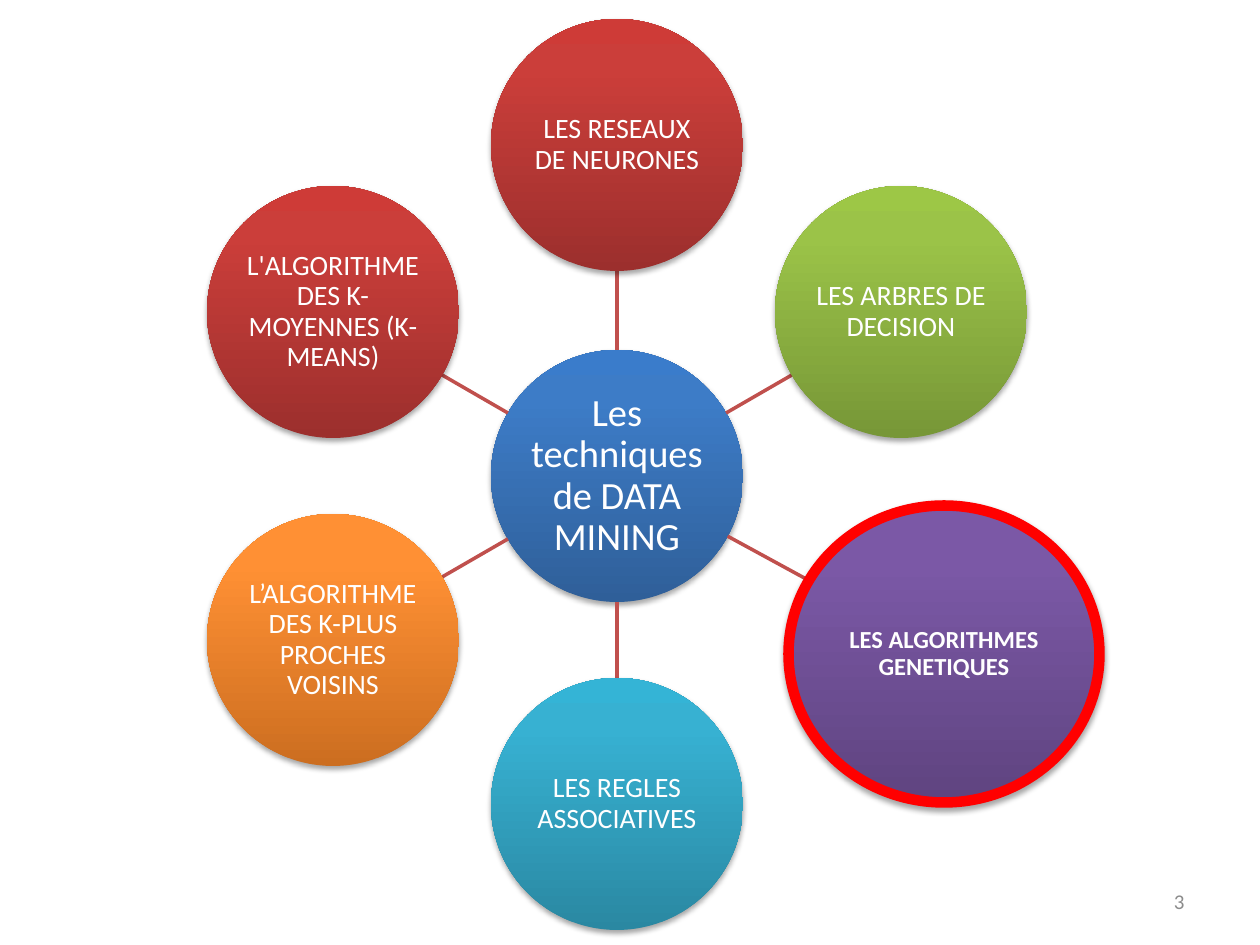
from copy import deepcopy
from dataclasses import dataclass
from math import cos, hypot, sin, atan2

from lxml.etree import SubElement
from pptx import Presentation
from pptx.dml.color import RGBColor
from pptx.enum.shapes import MSO_CONNECTOR as Connector, MSO_SHAPE as Shape
from pptx.enum.text import MSO_ANCHOR as Anchor, PP_ALIGN as Align
from pptx.oxml.ns import qn
from pptx.util import Emu, Pt

PX_PER_INCH = 126
FONT = "Calibri"
COLORS = {
    "text": "FFFFFF",
    "spoke": "C0504D",
    "highlight": "FF0000",
    "page": "8C8C8C",
    "shadow": "000000",
}
GRADIENTS = {
    "blue": ("2F5F99", "3D7CC7", "3A7CCB"),
    "red": ("9C2F2D", "CB3E3A", "CE3B37"),
    "green": ("779737", "9BC348", "9DC746"),
    "purple": ("5F4480", "7B58A6", "7C57A8"),
    "teal": ("2A88A2", "37B1D2", "34B4D6"),
    "orange": ("CC6E20", "FF9034", "FF9136"),
}
STOP_POSITIONS = (0, 0.8, 1)


@dataclass(frozen=True)
class Bubble:
    label: str
    gradient: str
    x: int
    y: int
    width: int = 252
    height: int = 252
    size: int = 16
    margin: int = 1
    highlighted: bool = False

    def edge(self, angle: float) -> tuple[float, float]:
        reach = 1 / hypot(2 * cos(angle) / self.width, 2 * sin(angle) / self.height)
        return self.x + reach * cos(angle), self.y + reach * sin(angle)


HUB = Bubble("Les techniques de DATA MINING", "blue", 617, 476, size=22, margin=2)
TECHNIQUES = (
    Bubble("LES RESEAUX DE NEURONES", "red", 617, 145),
    Bubble("LES ARBRES DE DECISION", "green", 901, 312),
    Bubble("LES ALGORITHMES GENETIQUES", "purple", 944, 654, 311, 297, 14,
           highlighted=True),
    Bubble("LES REGLES ASSOCIATIVES", "teal", 617, 804),
    Bubble("L’ALGORITHME DES K-PLUS PROCHES VOISINS", "orange", 333, 640),
    Bubble("L'ALGORITHME DES K-MOYENNES (K-MEANS)", "red", 333, 312),
)


def px(length: float) -> Emu:
    return Emu(round(length * 914400 / PX_PER_INCH))


def rgb(name: str) -> RGBColor:
    return RGBColor.from_string(COLORS[name])


def write(frame, text: str, size: int, color: str, align, bold: bool = False) -> None:
    frame.word_wrap = True
    frame.vertical_anchor = Anchor.MIDDLE
    paragraph = frame.paragraphs[0]
    paragraph.alignment = align
    run = paragraph.add_run()
    run.text = text
    run.font.name = FONT
    run.font.size = Pt(size)
    run.font.bold = bold
    run.font.color.rgb = rgb(color)


def shade(oval, gradient: str) -> None:
    oval.fill.gradient()
    oval.fill.gradient_angle = 90
    stop_list = oval.element.spPr.find(".//" + qn("a:gsLst"))
    stop_list.append(deepcopy(stop_list[-1]))
    stops = zip(oval.fill.gradient_stops, STOP_POSITIONS, GRADIENTS[gradient])
    for stop, position, color in stops:
        stop.position = position
        stop.color.rgb = RGBColor.from_string(color)


def cast_shadow(oval) -> None:
    oval.shadow.inherit = False
    effects = oval.element.spPr.find(qn("a:effectLst"))
    shadow = SubElement(effects, qn("a:outerShdw"), blurRad=str(Pt(3.1)),
                        dist=str(Pt(1.8)), dir="5400000", rotWithShape="0")
    color = SubElement(shadow, qn("a:srgbClr"), val=COLORS["shadow"])
    SubElement(color, qn("a:alpha"), val="35000")


def draw_bubble(slide, bubble: Bubble) -> None:
    oval = slide.shapes.add_shape(
        Shape.OVAL, px(bubble.x - bubble.width / 2), px(bubble.y - bubble.height / 2),
        px(bubble.width), px(bubble.height))
    shade(oval, bubble.gradient)
    if bubble.highlighted:
        oval.line.color.rgb = rgb("highlight")
        oval.line.width = Pt(6)
    else:
        oval.line.fill.background()
    cast_shadow(oval)
    frame = oval.text_frame
    frame.margin_left = frame.margin_right = px(bubble.margin)
    frame.margin_top = frame.margin_bottom = px(bubble.margin)
    write(frame, bubble.label, bubble.size, "text", Align.CENTER, bubble.highlighted)
    frame.paragraphs[0].line_spacing = 0.9


def draw_spoke(slide, hub: Bubble, technique: Bubble) -> None:
    angle = atan2(technique.y - hub.y, technique.x - hub.x)
    start = hub.edge(angle)
    end = technique.edge(angle)
    # pi is avoided by pointing back along the same ray
    back = atan2(hub.y - technique.y, hub.x - technique.x)
    end = technique.edge(back)
    spoke = slide.shapes.add_connector(
        Connector.STRAIGHT, *(px(value) for value in start + end))
    spoke.line.color.rgb = rgb("spoke")
    spoke.line.width = Pt(2)
    SubElement(spoke.element.spPr, qn("a:effectLst"))


def draw_page_number(slide, number: str) -> None:
    box = slide.shapes.add_textbox(px(903), px(876), px(294), px(50))
    write(box.text_frame, number, 12, "page", Align.RIGHT)


def main() -> None:
    deck = Presentation()
    deck.slide_width, deck.slide_height = px(1260), px(945)
    slide = deck.slides.add_slide(deck.slide_layouts[6])
    draw_bubble(slide, HUB)
    for technique in TECHNIQUES:
        draw_spoke(slide, HUB, technique)
        draw_bubble(slide, technique)
    draw_page_number(slide, "3")
    deck.save("out.pptx")


if __name__ == "__main__":
    main()
